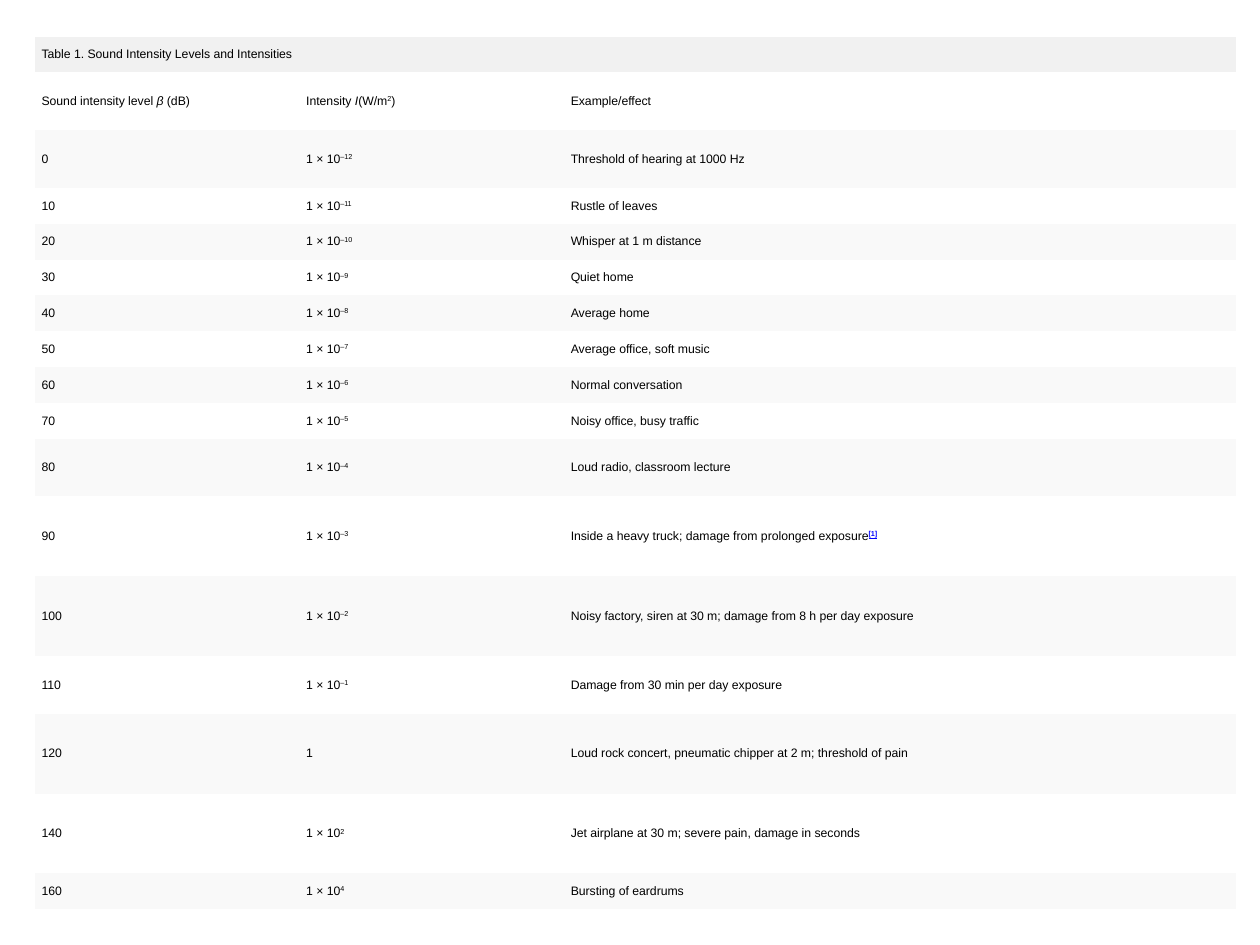
"""Build a slide with a table of sound intensity levels and examples."""
from pptx import Presentation
from pptx import util as u
from pptx.dml.color import RGBColor
from pptx.enum import text


def paint(color_format, hex_value):
    color_format.rgb = RGBColor.from_string(hex_value)


def write(cell, runs, fill):
    cell.fill.solid()
    paint(cell.fill.fore_color, fill)
    for name, value in cell_format.items():
        setattr(cell, name, value)
    for words, style in runs:
        run = cell.text_frame.paragraphs[0].add_run()
        run.text = words
        for name, value in {**font_format, **style.get("font", {})}.items():
            setattr(run.font, name, value)
        paint(run.font.color, style.get("color", "000000"))
        if style.get("raised"):
            run.font._element.set("baseline", "30000")


cell_format = {
    "margin_left": u.Inches(0.05), "margin_right": u.Inches(0.05),
    "margin_top": u.Inches(0.04), "margin_bottom": u.Inches(0.04),
    "vertical_anchor": text.MSO_ANCHOR.MIDDLE,
}
font_format = {"name": "Arial", "size": u.Pt(7), "bold": False, "italic": False}
plain = {}
italic = {"font": {"italic": True}}
raised = {"raised": True}
footnote = {"raised": True, "color": "0000FF", "font": {"bold": True, "underline": True}}

title = "Table 1. Sound Intensity Levels and Intensities"
headings = [
    [("Sound intensity level\u00a0", plain), ("β", italic), ("\u00a0(dB)", plain)],
    [("Intensity\u00a0", plain), ("I", italic), ("(W/m", plain), ("2", raised), (")", plain)],
    [("Example/effect", plain)],
]
levels = [
    ("0", "–12", "Threshold of hearing at 1000 Hz", 2),
    ("10", "–11", "Rustle of leaves", 1),
    ("20", "–10", "Whisper at 1 m distance", 1),
    ("30", "–9", "Quiet home", 1),
    ("40", "–8", "Average home", 1),
    ("50", "–7", "Average office, soft music", 1),
    ("60", "–6", "Normal conversation", 1),
    ("70", "–5", "Noisy office, busy traffic", 1),
    ("80", "–4", "Loud radio, classroom lecture", 2),
    ("90", "–3", "Inside a heavy truck; damage from prolonged exposure", 3),
    ("100", "–2", "Noisy factory, siren at 30 m; damage from 8 h per day exposure", 3),
    ("110", "–1", "Damage from 30 min per day exposure", 2),
    ("120", "", "Loud rock concert, pneumatic chipper at 2 m; threshold of pain", 3),
    ("140", "2", "Jet airplane at 30 m; severe pain, damage in seconds", 3),
    ("160", "4", "Bursting of eardrums", 1),
]
row_lines = [1, 2] + [lines for *_, lines in levels]
table_height = 6.93
row_padding = 0.11
line_pitch = (table_height - row_padding * len(row_lines)) / sum(row_lines)

deck = Presentation()
deck.slide_width, deck.slide_height = u.Inches(10), u.Inches(7.5)
slide = deck.slides.add_slide(deck.slide_layouts[6])
frame = slide.shapes.add_table(
    len(row_lines), 3, u.Inches(0.28), u.Inches(0.29), u.Inches(9.53), u.Inches(table_height))
intensities = frame.table
intensities.first_row = intensities.horz_banding = False
no_grid_style = "{2D5ABB26-0587-4C30-8999-92F81FD0307C}"
intensities._tbl.tblPr[0].text = no_grid_style

for column, width in zip(intensities.columns, (2.1, 2.1, 5.33)):
    column.width = u.Inches(width)
for row, lines in zip(intensities.rows, row_lines):
    row.height = u.Inches(row_padding + lines * line_pitch)

intensities.cell(0, 0).merge(intensities.cell(0, 2))
write(intensities.cell(0, 0), [(title, plain)], "F1F1F1")

body = [headings]
for level, exponent, example, lines in levels:
    intensity = [("1 × 10", plain), (exponent, raised)] if exponent else [("1", plain)]
    effect = [(example, plain)] + ([("[1]", footnote)] if level == "90" else [])
    body.append([[(level, plain)], intensity, effect])

for row_index, entries in enumerate(body, start=1):
    for column_index, runs in enumerate(entries):
        write(intensities.cell(row_index, column_index), runs,
              "FFFFFF" if row_index % 2 else "F9F9F9")

deck.save("out.pptx")
